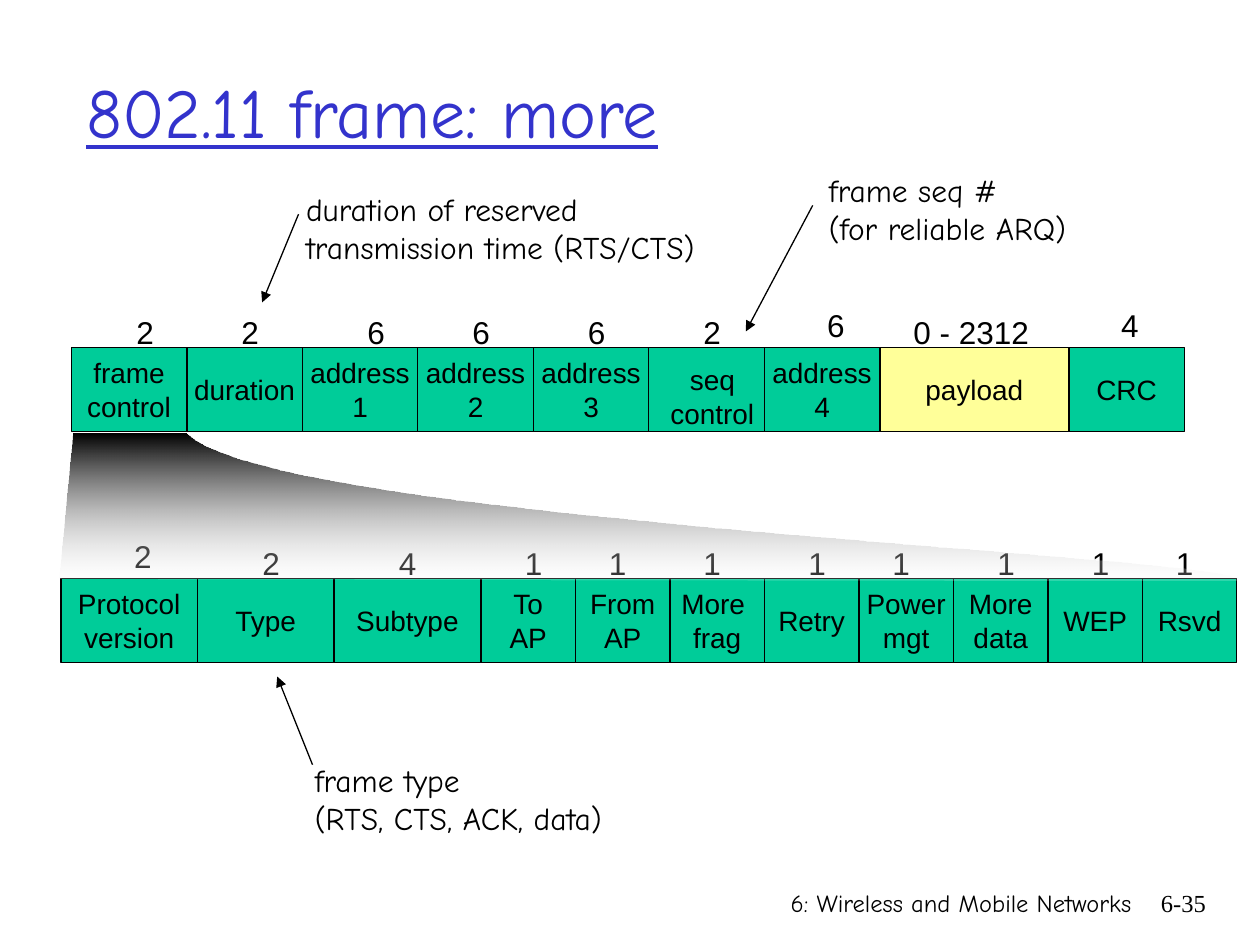
from lxml.etree import SubElement
from pptx import Presentation
from pptx.dml.color import RGBColor
from pptx.enum.shapes import MSO_CONNECTOR, MSO_SHAPE
from pptx.enum.text import MSO_ANCHOR, MSO_AUTO_SIZE, PP_ALIGN
from pptx.oxml.ns import qn
from pptx.util import Pt

COLORS = {"ink": "000000", "title": "3333CC", "header": "00CC99",
          "payload": "FFFF99", "fade": "FFFFFF"}
HAND, SANS, SERIF = "Comic Neue", "Arial", "Times New Roman"
LINE_WIDTH = 0.75
ROW_HEIGHT = 48
FRAME_LEFT, FRAME_TOP = 40.8, 198.6
CONTROL_LEFT, CONTROL_TOP = 34.8, 330.6
SIZE_OFFSET, SIZE_RAISE = 23.4, 3.6

# label, cell width, size text, left of size text, size text raised
FRAME_FIELDS = [
    ("frame\ncontrol", 66, "2", 70.8, False),
    ("duration", 66, "2", 130.8, False),
    ("address\n1", 66, "6", 202.8, False),
    ("address\n2", 66, "6", 262.8, False),
    ("address\n3", 66, "6", 328.8, False),
    ("", 66, "2", 394.8, False),
    ("address\n4", 66, "6", 465.6, True),
    ("payload", 108, "0 - 2312", 514.8, False),
    ("CRC", 66, "4", 633.6, True),
]
CONTROL_FIELDS = [
    ("Protocol\nversion", 78, "2", 69.6, True),
    ("Type", 78, "2", 142.8, False),
    ("Subtype", 84, "4", 220.8, False),
    ("To\nAP", 54, "1", 292.8, False),
    ("From\nAP", 54, "1", 340.8, False),
    ("More \nfrag", 54, "1", 394.8, False),
    ("Retry", 54, "1", 454.8, False),
    ("Power\nmgt", 54, "1", 502.8, False),
    ("More\ndata", 54, "1", 562.8, False),
    ("WEP", 54, "1", 616.8, False),
    ("Rsvd", 54, "1", 664.8, False),
]


def color(name):
    return RGBColor.from_string(COLORS[name])


def write_text(frame, text, font=SANS, size=18, ink="ink", align=PP_ALIGN.LEFT,
               anchor=MSO_ANCHOR.TOP, wrap=False, underline=None):
    frame.auto_size = MSO_AUTO_SIZE.NONE
    frame.word_wrap = wrap
    frame.vertical_anchor = anchor
    for index, line in enumerate(text.split("\n")):
        paragraph = frame.add_paragraph() if index else frame.paragraphs[0]
        paragraph.alignment = align
        run = paragraph.add_run()
        run.text = line
        run.font.name = font
        run.font.size = Pt(size)
        run.font.underline = underline
        run.font.color.rgb = color(ink)


def bezier(start, first, second, end, steps=40):
    """Return points along a cubic curve, leaving out its start."""
    points = []
    for step in range(1, steps + 1):
        t = step / steps
        weights = ((1 - t) ** 3, 3 * t * (1 - t) ** 2, 3 * t * t * (1 - t), t ** 3)
        points.append(tuple(
            sum(weight * value for weight, value in zip(weights, axis))
            for axis in zip(start, first, second, end)))
    return points


class FrameSlide:
    """Holds the slide and draws its elements in one style."""

    def __init__(self, presentation):
        self.slide = presentation.slides.add_slide(presentation.slide_layouts[5])
        self.shapes = self.slide.shapes

    def title(self, text, left, top, width, height):
        shape = self.shapes.title
        shape.left, shape.top = Pt(left), Pt(top)
        shape.width, shape.height = Pt(width), Pt(height)
        write_text(shape.text_frame, text, font=HAND, size=40, ink="title",
                   anchor=MSO_ANCHOR.MIDDLE, wrap=True, underline=True)

    def text(self, text, left, top, width, height, **style):
        box = self.shapes.add_textbox(Pt(left), Pt(top), Pt(width), Pt(height))
        write_text(box.text_frame, text, **style)

    def cell(self, label, left, top, width):
        shape = self.shapes.add_shape(MSO_SHAPE.RECTANGLE, Pt(left), Pt(top),
                                      Pt(width), Pt(ROW_HEIGHT))
        shape.shadow.inherit = False
        shape.fill.solid()
        shape.fill.fore_color.rgb = color("payload" if label == "payload" else "header")
        shape.line.color.rgb = color("ink")
        shape.line.width = Pt(LINE_WIDTH)
        if label:
            write_text(shape.text_frame, label, size=16, align=PP_ALIGN.CENTER,
                       anchor=MSO_ANCHOR.MIDDLE)

    def row(self, fields, left, top):
        """Draw adjoining field cells, then the field sizes above them."""
        for label, width, *_ in fields:
            self.cell(label, left, top, width)
            left += width
        for _, _, size, size_left, raised in fields:
            size_top = top - SIZE_OFFSET - (SIZE_RAISE if raised else 0)
            self.text(size, size_left, size_top, 80.6 if len(size) > 1 else 24.4, 28.8)

    def zoom(self, points):
        """Draw the outline that fades from dark to see-through white."""
        points = [(Pt(x), Pt(y)) for x, y in points]
        builder = self.shapes.build_freeform(*points[0], scale=1.0)
        builder.add_line_segments(points[1:], close=True)
        shape = builder.convert_to_shape()
        shape.shadow.inherit = False
        shape.line.fill.background()
        shape.fill.gradient()
        shape.fill.gradient_angle = 270
        for stop, name, position in zip(shape.fill.gradient_stops, ("ink", "fade"), (0, 1)):
            stop.color.rgb = color(name)
            stop.position = position
        last_color = list(shape.element.spPr.iter(qn("a:srgbClr")))[-1]
        SubElement(last_color, qn("a:alpha"), val="18000")

    def arrow(self, start, end):
        connector = self.shapes.add_connector(
            MSO_CONNECTOR.STRAIGHT, *(Pt(value) for value in (*start, *end)))
        connector.line.color.rgb = color("ink")
        connector.line.width = Pt(LINE_WIDTH)
        properties = connector.element.spPr
        SubElement(properties.find(qn("a:ln")), qn("a:tailEnd"), type="triangle")
        SubElement(properties, qn("a:effectLst"))

    def note(self, text, left, top, width, start, end):
        self.text(text, left, top, width, 50.4, font=HAND)
        self.arrow(start, end)


def main():
    presentation = Presentation()
    presentation.slide_width, presentation.slide_height = Pt(720), Pt(540)
    page = FrameSlide(presentation)

    page.text("6: Wireless and Mobile Networks", 350, 504, 303.8, 36,
              font=HAND, size=14, align=PP_ALIGN.RIGHT, wrap=True)
    page.text("6-35", 643, 504, 53.2, 36,
              font=SERIF, size=14, align=PP_ALIGN.RIGHT, wrap=True)

    page.row(FRAME_FIELDS, FRAME_LEFT, FRAME_TOP)
    page.text("seq\ncontrol", 375.8, 203.8, 62.6, 46, size=16, align=PP_ALIGN.CENTER)
    page.row(CONTROL_FIELDS, CONTROL_LEFT, CONTROL_TOP)

    zoom_right = (707.8, 332)
    curve = bezier(zoom_right, (720, 317.5), (155.5, 298.8), (106.6, 247.7))
    page.zoom([(41.8, 247.7), (33.8, CONTROL_TOP), zoom_right, *curve])

    page.title("802.11 frame: more", 42, 18, 612, 90)
    page.note("duration of reserved\ntransmission time (RTS/CTS)", 167.8, 105, 261.4,
              (170.6, 122.4), (149.8, 172.8))
    page.note("frame seq #\n(for reliable ARQ)", 466.6, 94.3, 169.2,
              (464.4, 117.4), (426.2, 189.4))
    page.note("frame type\n(RTS, CTS, ACK, data)", 172.8, 431.3, 203,
              (178.6, 437), (158.4, 386.6))
    presentation.save("out.pptx")


if __name__ == "__main__":
    main()
